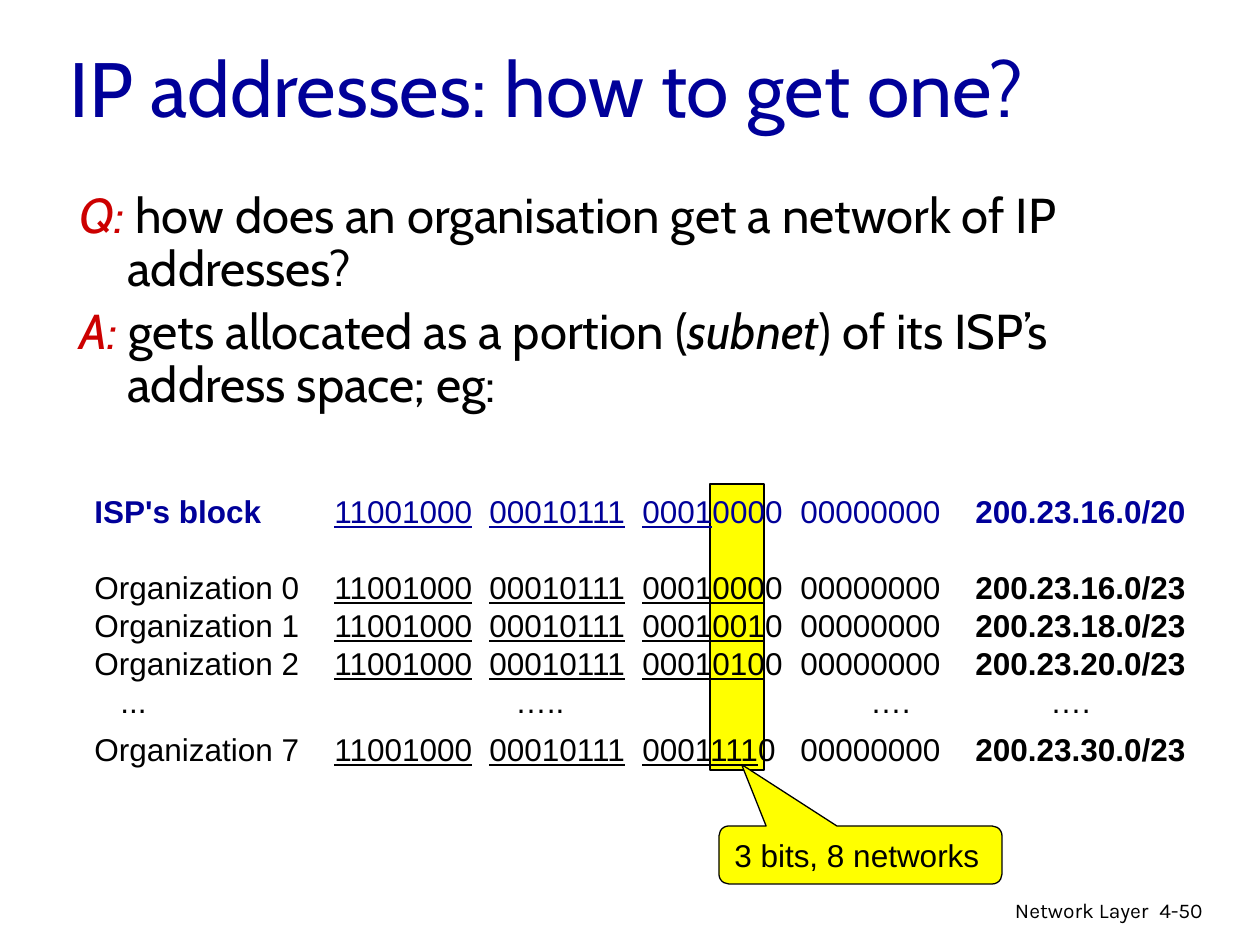
from lxml import etree
from pptx import Presentation
from pptx.dml.color import RGBColor
from pptx.enum.shapes import MSO_SHAPE
from pptx.enum.text import MSO_ANCHOR, PP_ALIGN
from pptx.oxml.ns import qn
from pptx.util import Emu, Inches, Pt

RECTANGLE = MSO_SHAPE.RECTANGLE
CALLOUT = MSO_SHAPE.ROUNDED_RECTANGULAR_CALLOUT
TOP, MIDDLE = MSO_ANCHOR.TOP, MSO_ANCHOR.MIDDLE
LEFT, RIGHT = PP_ALIGN.LEFT, PP_ALIGN.RIGHT
PX = Inches(1) / 126
COLORS = {"black": "000000", "navy": "000099", "red": "CC0000", "yellow": "FFFF00"}


def px(length):
    return Emu(round(length * PX))


def add_span(para, text, font, size, color="black", bold=False, italic=False, underline=False):
    span = para.add_run()
    span.text = text
    span.font.name = font
    span.font.size = Pt(size)
    span.font.color.rgb = RGBColor.from_string(COLORS[color])
    span.font.bold = bold
    span.font.italic = italic
    span.font.underline = underline


deck = Presentation()
deck.slide_width, deck.slide_height = px(1260), px(945)
page = deck.slides.add_slide(deck.slide_layouts[5])

shapes = []
for kind, left, top, width, height in [
    (RECTANGLE, 710, 484, 54, 286),
    (CALLOUT, 719, 826, 283, 58),
]:
    shape = page.shapes.add_shape(kind, px(left), px(top), px(width), px(height))
    shape.shadow.inherit = False
    shape.fill.solid()
    shape.fill.fore_color.rgb = RGBColor.from_string(COLORS["yellow"])
    shape.line.color.rgb = RGBColor.from_string(COLORS["black"])
    shape.line.width = Pt(0.75)
    shapes.append(shape)
highlight, callout = shapes

for index, value in enumerate([-0.42, -1.56, 0.17]):
    callout.adjustments[index] = value
callout.text_frame.word_wrap = False
callout.text_frame.vertical_anchor = MIDDLE
para = callout.text_frame.paragraphs[0]
para.alignment = LEFT
add_span(para, "3 bits, 8 networks", "Arial", 18)

title = page.shapes.title
title.left, title.top, title.width, title.height = px(57), px(23), px(1071), px(128)
title.text_frame.vertical_anchor = MIDDLE
para = title.text_frame.paragraphs[0]
para.alignment = LEFT
add_span(para, "IP addresses: how to get one?", "Cabin", 44, "navy")

for text, left, width, alignment in [
    ("Network Layer", 762, 399, RIGHT),
    ("4-50", 1147, 93, LEFT),
]:
    box = page.shapes.add_textbox(px(left), px(891), px(width), px(39))
    box.text_frame.word_wrap = True
    para = box.text_frame.paragraphs[0]
    para.alignment = alignment
    add_span(para, text, "Karla", 12)

box = page.shapes.add_textbox(px(67), px(185), px(1113), px(249))
frame = box.text_frame
frame.word_wrap = True
for number, (label, pieces) in enumerate([
    ("Q:", [(" how does an organisation get a network of IP addresses?", False)]),
    ("A:", [(" gets allocated as a portion (", False), ("subnet", True),
            (") of its ISP’s address space; eg:", False)]),
]):
    para = frame.add_paragraph() if number else frame.paragraphs[0]
    para.line_spacing = 0.9
    para.space_before = Pt(6)
    properties = para._p.get_or_add_pPr()
    properties.set("marL", str(px(48)))
    properties.set("indent", str(px(-48)))
    add_span(para, label, "Cabin", 28, "red", italic=True)
    for text, italic in pieces:
        add_span(para, text, "Cabin", 28, italic=italic)

ADDRESS_STOPS = [240, 395, 548, 706, 881]
ELLIPSIS_STOPS = [26, 421, 776, 956]
PREFIX = "11001000\t00010111\t0001"
HOST = "0\t00000000\t"
rows = [
    ("ISP's block\t", PREFIX, "000" + HOST, "200.23.16.0/20", 0),
    ("Organization 0\t", PREFIX + "000", HOST, "200.23.16.0/23", 38),
    ("Organization 1\t", PREFIX + "001", HOST, "200.23.18.0/23", 0),
    ("Organization 2\t", PREFIX + "010", HOST, "200.23.20.0/23", 0),
    ("\t...\t…..\t….\t….", "", "", "", 0),
    ("Organization 7\t", PREFIX + "111", HOST, "200.23.30.0/23", 10),
]
box = page.shapes.add_textbox(px(82), px(484), px(1178), px(328))
frame = box.text_frame
frame.word_wrap = True
frame.vertical_anchor = TOP
frame.margin_top = px(8)
for number, (name, network, host, address, gap) in enumerate(rows):
    para = frame.add_paragraph() if number else frame.paragraphs[0]
    para.line_spacing = px(38)
    para.space_before = px(gap)
    tabs = etree.SubElement(para._p.get_or_add_pPr(), qn("a:tabLst"))
    for stop in ADDRESS_STOPS if network else ELLIPSIS_STOPS:
        etree.SubElement(tabs, qn("a:tab"), pos=str(px(stop)), algn="l")
    color = "black" if number else "navy"
    add_span(para, name, "Arial", 18, color, bold=number == 0)
    if network:
        add_span(para, network, "Arial", 18, color, underline=True)
        add_span(para, host, "Arial", 18, color)
        add_span(para, address, "Arial", 18, color, bold=True)

deck.save("out.pptx")
